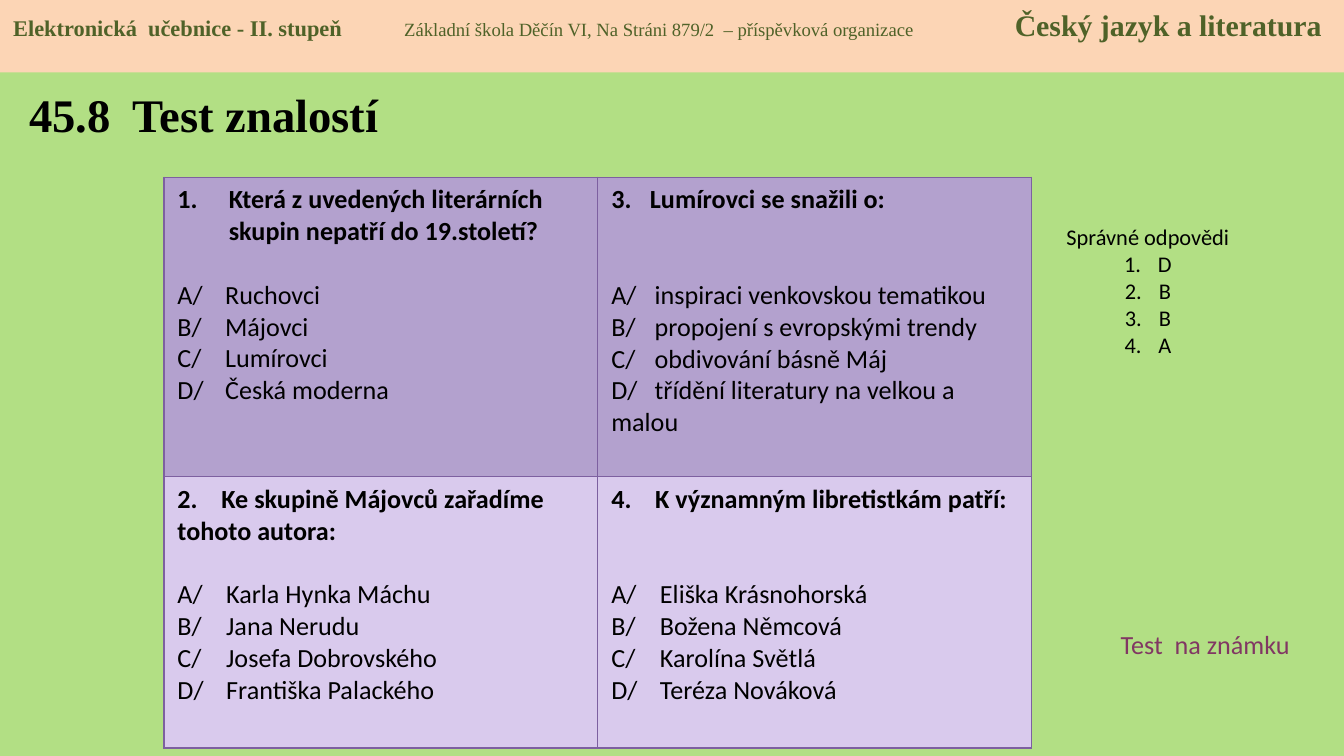
from dataclasses import dataclass

from lxml.etree import SubElement
from pptx import Presentation
from pptx.dml.color import RGBColor
from pptx.enum.shapes import MSO_SHAPE
from pptx.enum.text import MSO_ANCHOR, PP_ALIGN
from pptx.oxml.ns import qn
from pptx.util import Cm, Pt


@dataclass(frozen=True)
class Theme:
    background: str = "B2DF84"
    banner: str = "FCD5B5"
    banner_text: str = "4F6228"
    ink: str = "000000"
    accent: str = "813763"
    border: str = "7D60A0"
    row_fills: tuple = ("B3A1CE", "D9CAED")
    serif: str = "Times New Roman"
    sans: str = "Calibri"
    title_size: float = 25
    subject_size: float = 16
    body_size: float = 14
    small_size: float = 12
    school_size: float = 10
    border_width: float = 0.75
    line_height: float = 17.1


THEME = Theme()
QUESTIONS = [
    [
        dict(
            heading="Která z uvedených literárních skupin nepatří do 19.století?",
            answers=["Ruchovci", "Májovci", "Lumírovci", "Česká moderna"],
            indent=0.97, tab=0.9, gap_lines=1,
        ),
        dict(
            heading="3.\tLumírovci se snažili o:",
            answers=["inspiraci venkovskou tematikou", "propojení s evropskými trendy",
                     "obdivování básně Máj", "třídění literatury na velkou a malou"],
            heading_tab=0.73, tab=0.82, gap_lines=2,
        ),
    ],
    [
        dict(
            heading="2.\tKe skupině Májovců zařadíme tohoto autora:",
            answers=["Karla Hynka Máchu", "Jana Nerudu",
                     "Josefa Dobrovského", "Františka Palackého"],
            heading_tab=0.83, tab=0.92, gap_lines=1,
        ),
        dict(
            heading="4.\tK významným libretistkám patří:",
            answers=["Eliška Krásnohorská", "Božena Němcová",
                     "Karolína Světlá", "Teréza Nováková"],
            heading_tab=0.83, tab=0.92, gap_lines=2,
        ),
    ],
]


def color(value):
    return RGBColor.from_string(value)


def paint(target, value):
    target.fill.solid()
    target.fill.fore_color.rgb = color(value)


def set_attributes(target, values):
    for name, value in values.items():
        setattr(target, name, value)


def add_span(para, text, size, family=THEME.sans, ink=THEME.ink, bold=False):
    span = para.add_run()
    span.text = text
    set_attributes(span.font, dict(name=family, size=Pt(size), bold=bold))
    span.font.color.rgb = color(ink)


def add_para(frame, **values):
    first = frame.paragraphs[0]
    para = first if not first.runs else frame.add_paragraph()
    set_attributes(para, values)
    return para


def number_para(para, indent):
    properties = para._p.get_or_add_pPr()
    properties.set("marL", str(Cm(indent)))
    properties.set("indent", str(-Cm(indent)))
    SubElement(properties, qn("a:buFont"), typeface="+mj-lt")
    SubElement(properties, qn("a:buAutoNum"), type="arabicPeriod")


def set_tabs(para, *stops):
    tabs = SubElement(para._p.get_or_add_pPr(), qn("a:tabLst"))
    for position, alignment in stops:
        SubElement(tabs, qn("a:tab"), pos=str(Cm(position)), algn=alignment)


def add_box(page, left, top, width, height, **values):
    box = page.shapes.add_textbox(Cm(left), Cm(top), Cm(width), Cm(height))
    set_attributes(box.text_frame, dict(word_wrap=True) | values)
    return box.text_frame


def add_banner(page, width):
    banner = page.shapes.add_shape(MSO_SHAPE.RECTANGLE, 0, 0, width, Cm(1.37))
    banner.shadow.inherit = False
    paint(banner, THEME.banner)
    banner.line.fill.background()
    frame = banner.text_frame
    set_attributes(frame, dict(word_wrap=True, vertical_anchor=MSO_ANCHOR.TOP))
    para = add_para(frame, alignment=PP_ALIGN.LEFT)
    set_tabs(para, (7.39, "l"), (24.73, "r"))
    for text, size, bold in [
        ("Elektronická  učebnice - II. stupeň\t", THEME.small_size, True),
        ("Základní škola Děčín VI, Na Stráni 879/2  – příspěvková organizace\t",
         THEME.school_size, False),
        ("Český jazyk a literatura", THEME.subject_size, True),
    ]:
        add_span(para, text, size, THEME.serif, THEME.banner_text, bold)


def add_borders(cell):
    properties = cell._tc.get_or_add_tcPr()
    for place, side in enumerate(("lnL", "lnR", "lnT", "lnB")):
        line = properties.makeelement(qn(f"a:{side}"), w=str(Pt(THEME.border_width)))
        fill = SubElement(line, qn("a:solidFill"))
        SubElement(fill, qn("a:srgbClr"), val=THEME.border)
        properties.insert(place, line)


def fill_question(cell, question):
    frame = cell.text_frame
    para = add_para(frame)
    if "indent" in question:
        number_para(para, question["indent"])
    else:
        set_tabs(para, (question["heading_tab"], "l"))
    add_span(para, question["heading"], THEME.body_size, bold=True)
    for letter, answer in zip("ABCD", question["answers"]):
        para = add_para(frame)
        set_tabs(para, (question["tab"], "l"))
        if letter == "A":
            para.space_before = Pt(THEME.line_height * question["gap_lines"])
        add_span(para, f"{letter}/\t{answer}", THEME.body_size)


def add_questions(page):
    heights = (5.66, 5.13)
    table = page.shapes.add_table(
        2, 2, Cm(3.1), Cm(3.35), Cm(16.4), Cm(sum(heights))
    ).table
    for row, height, fill, questions in zip(table.rows, heights, THEME.row_fills, QUESTIONS):
        row.height = Cm(height)
        for cell, question in zip(row.cells, questions):
            paint(cell, fill)
            add_borders(cell)
            fill_question(cell, question)


def add_answers(page):
    frame = add_box(page, 19.89, 3.58, 3.61, 3.84, margin_top=Cm(0.64))
    heading = add_para(frame, alignment=PP_ALIGN.CENTER)
    add_span(heading, "Správné odpovědi", THEME.small_size)
    for letter in "DBBA":
        para = add_para(frame, alignment=PP_ALIGN.CENTER)
        number_para(para, 0.64)
        add_span(para, letter, THEME.small_size)


def main():
    deck = Presentation()
    set_attributes(deck, dict(slide_width=Cm(25.4), slide_height=Cm(14.29)))
    page = deck.slides.add_slide(deck.slide_layouts[6])
    paint(page.background, THEME.background)

    title = add_box(page, 0.3, 1.37, 23.83, 1.57, vertical_anchor=MSO_ANCHOR.MIDDLE)
    add_span(add_para(title), "45.8  Test znalostí", THEME.title_size, THEME.serif, bold=True)
    add_questions(page)
    add_answers(page)
    grade = add_box(page, 20.93, 11.76, 3.99, 0.86)
    add_span(add_para(grade), "Test  na známku", THEME.body_size, ink=THEME.accent)
    add_banner(page, deck.slide_width)
    deck.save("out.pptx")


if __name__ == "__main__":
    main()
